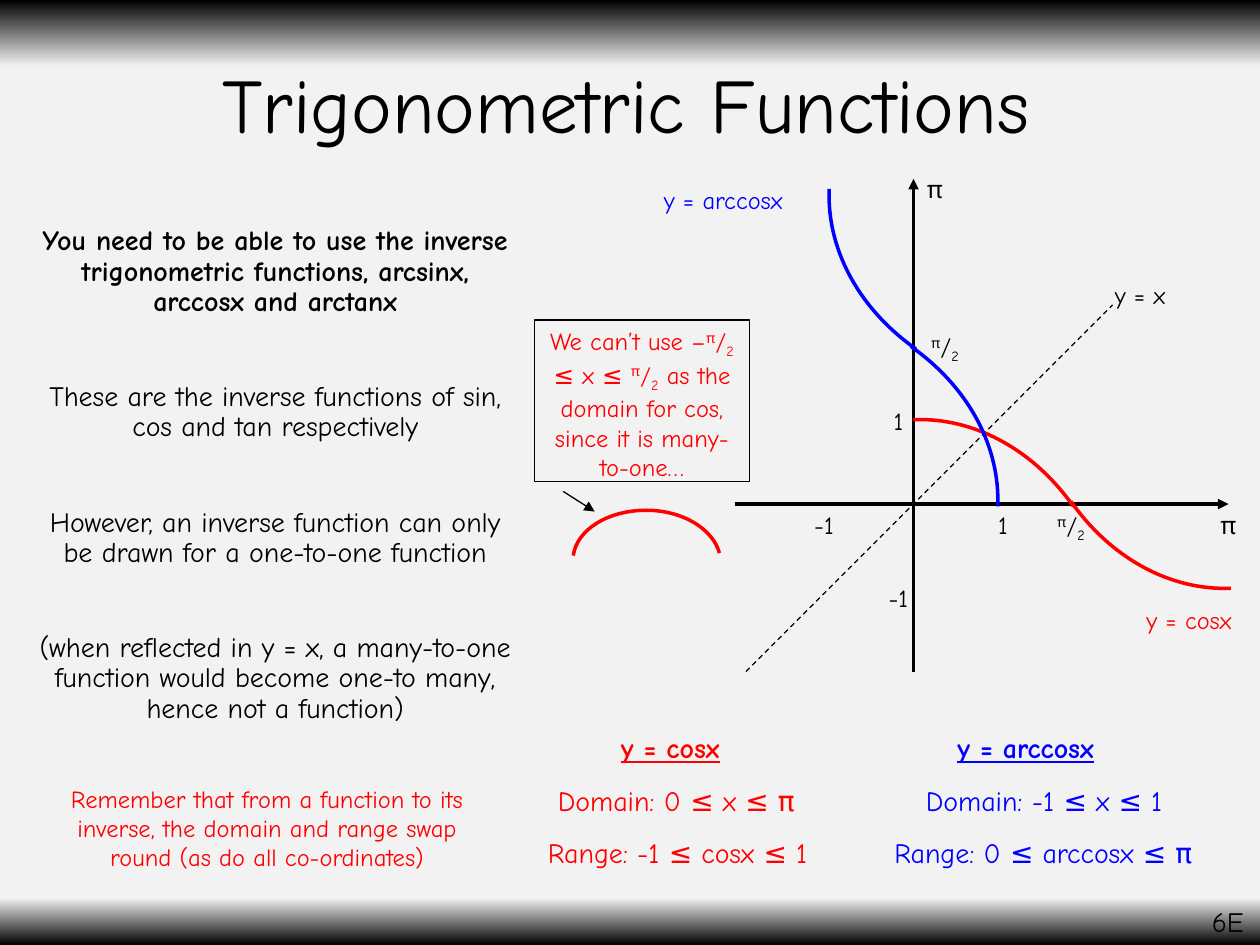
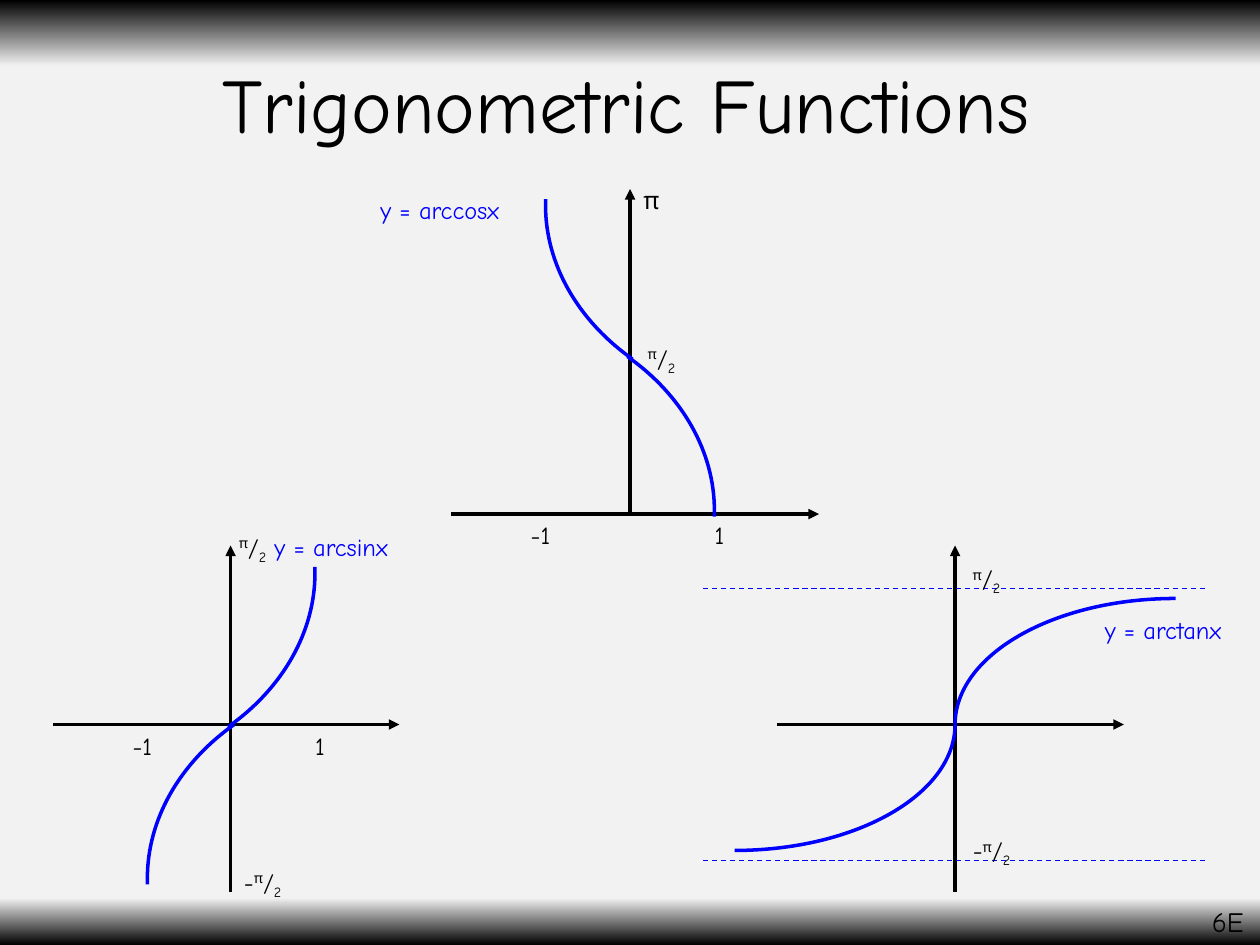
"""Two slides on the inverse trigonometric functions and their graphs."""
from lxml import etree
from pptx import Presentation
from pptx.dml.color import RGBColor
from pptx.enum import dml, shapes, text
from pptx.oxml.ns import qn
from pptx.util import Inches, Pt

FONT = "Comic Neue"
BLACK, RED, BLUE, GREY = "000000", "FF0000", "0000FF", "F2F2F2"
STOPS = [(0, BLACK), (7, GREY), (95, GREY), (100, BLACK)]
TITLE, CODE = "Trigonometric Functions", "6E"
HALF = "½"
PARTS = [("π", 30), ("/", 0), ("2", -25)]

WAVE = [(0, 0), (.02, 0), (.03, 0), (.05, 0), (.51, 0), (.96, .25), (1.27, .69),
        (.05, 2.17)]
BEND = [(0, 0), (.97, 0), (1.75, .45), (1.75, 1), (0, 1)]
DOME = [(0, 0), (.03, -.21), (.28, -.36), (.58, -.36),
        (.87, -.36), (1.11, -.21), (1.16, -.02), (.58, .04)]

NOTES = [
    "You need to be able to use the inverse trigonometric functions, "
    "arcsinx, arccosx and arctanx",
    "These are the inverse functions of sin, cos and tan respectively",
    "However, an inverse function can only be drawn for a one-to-one function",
    "(when reflected in y = x, a many-to-one function would become "
    "one-to many, hence not a function)",
]
SWAP = ("Remember that from a function to its inverse, the domain and range "
        "swap round (as do all co-ordinates)")
WARN = ("We can’t use –½ ≤ x ≤ ½ as the domain for cos, "
        "since it is many-to-one…")
FACTS = [
    (RED, [("y = cosx", 4.83, 1.33), ("Domain: 0 ≤ x ≤ π", 4.33, 2.5),
           ("Range: -1 ≤ cosx ≤ 1", 4.25, 2.42)]),
    (BLUE, [("y = arccosx", 7.5, 1.58), ("Domain: -1 ≤ x ≤ 1", 7.25, 2.08),
            ("Range: 0 ≤ arccosx ≤ π", 7, 2.67)]),
]
ROWS = [5.75, 6.17, 6.58]

PAIR = {
    "axes": [(7.25, 5.33, 7.25, 1.42), (5.83, 4, 9.75, 4)],
    "dashes": [(5.92, 5.33, 8.83, 2.42, BLACK)],
    "arcs": [(WAVE, 9.77, 4.67, -1, -1, False, RED),
             (WAVE, 7.25, 3.33, 1, 1, False, RED),
             (WAVE, 7.92, 4.02, -1, -1, True, BLUE),
             (WAVE, 6.58, 1.5, 1, 1, True, BLUE),
             (DOME, 4.55, 4.41, 1, 1, False, RED)],
    "ticks": [(HALF, 8.25, 4, .5), ("-1", 6.33, 4, .42), ("1", 6.92, 3.17, .42),
              ("π", 9.5, 4, .5), ("-1", 6.92, 4.58, .42), (HALF, 7.25, 2.58, .5),
              ("π", 7.17, 1.33, .5), ("1", 7.75, 4, .42)],
    "names": [("y = cosx", 9, 4.75, 1, RED), ("y = arccosx", 5.17, 1.42, 1.42, BLUE),
              ("y = x", 8.75, 2.17, .83, BLACK)],
}
TRIO = {
    "axes": [(1.83, 7.08, 1.83, 4.33), (.42, 5.75, 3.17, 5.75),
             (5, 4.08, 5, 1.5), (3.58, 4.08, 6.5, 4.08),
             (7.58, 7.08, 7.58, 4.33), (6.17, 5.75, 8.92, 5.75)],
    "dashes": [(5.58, 4.67, 9.58, 4.67, BLUE), (5.58, 6.83, 9.58, 6.83, BLUE)],
    "arcs": [(WAVE, 2.5, 4.5, -1, 1, True, BLUE),
             (WAVE, 1.17, 7.02, 1, -1, True, BLUE),
             (WAVE, 5.67, 4.1, -1, -1, True, BLUE),
             (WAVE, 4.33, 1.58, 1, 1, True, BLUE),
             (BEND, 9.33, 4.75, -1, 1, False, BLUE),
             (BEND, 5.83, 6.75, 1, -1, False, BLUE)],
    "ticks": [("1", 2.33, 5.75, .42), ("-" + HALF, 1.75, 6.83, .67),
              ("-1", .92, 5.75, .42), ("-1", 4.08, 4.08, .42),
              (HALF, 5, 2.67, .5), ("π", 4.92, 1.42, .5), ("1", 5.5, 4.08, .42),
              (HALF, 7.58, 4.42, .5), ("-" + HALF, 7.58, 6.58, .58),
              (HALF, 1.67, 4.17, .67)],
    "names": [("y = arcsinx", 2.08, 4.17, 1.42, BLUE),
              ("y = arccosx", 2.92, 1.5, 1.42, BLUE),
              ("y = arctanx", 8.67, 4.83, 1.33, BLUE)],
}


def tint(code):
    return RGBColor.from_string(code)


def split(words):
    runs = []
    for n, part in enumerate(words.split(HALF)):
        runs += PARTS if n else []
        runs += [(part, 0)] if part else []
    return runs


def fill(para, words, size, color, mid=False, bold=False, under=False):
    para.alignment = text.PP_ALIGN.CENTER if mid else text.PP_ALIGN.LEFT
    for part, base in split(words):
        run = para.add_run()
        run.text = part
        font = run.font
        font.name, font.size, font.bold = FONT, Pt(size), bold
        font.underline = under
        font.color.rgb = tint(color)
        if base:
            run._r.get_or_add_rPr().set("baseline", str(base * 1000))


def label(slide, words, x, y, w, h=.33, size=14, color=BLACK, **style):
    box = slide.shapes.add_textbox(Inches(x), Inches(y), Inches(w), Inches(h))
    box.text_frame.word_wrap = True
    fill(box.text_frame.paragraphs[0], words, size, color, **style)
    return box.text_frame


def line(slide, x1, y1, x2, y2, color=BLACK, width=2, arrow=False, dash=False):
    ends = [Inches(v) for v in (x1, y1, x2, y2)]
    link = slide.shapes.add_connector(shapes.MSO_CONNECTOR.STRAIGHT, *ends)
    link.line.color.rgb = tint(color)
    link.line.width = Pt(width)
    if dash:
        link.line.dash_style = dml.MSO_LINE.DASH
    props = link._element.spPr
    if arrow:
        tail = etree.SubElement(props.find(qn("a:ln")), qn("a:tailEnd"))
        tail.set("type", "triangle")
    etree.SubElement(props, qn("a:effectLst"))


def draw(route, kind, dots):
    step = etree.SubElement(route, qn("a:" + kind))
    for x, y in dots:
        etree.SubElement(step, qn("a:pt"), x=str(x), y=str(y))


def bend(curve, dots):
    """Replace the outline by an open arc and the lineless sector below it."""
    dots = [(x - curve.left, y - curve.top) for x, y in dots]
    routes = curve._element.find(".//" + qn("a:pathLst"))
    for old in list(routes):
        routes.remove(old)
    size = {"w": str(curve.width), "h": str(curve.height)}
    for extra in ({"fill": "none"}, {"stroke": "0"}):
        route = etree.SubElement(routes, qn("a:path"), **size, **extra)
        draw(route, "moveTo", dots[:1])
        for n in range(1, len(dots) - 1, 3):
            draw(route, "cubicBezTo", dots[n:n + 3])
        if "stroke" in extra:
            draw(route, "lnTo", dots[-1:])
            draw(route, "close", [])


def arc(slide, knots, x, y, sx, sy, turn, color):
    dots = [p[::-1] if turn else p for p in knots]
    dots = [(Inches(x + sx * a), Inches(y + sy * b)) for a, b in dots]
    pen = slide.shapes.build_freeform(*dots[0])
    pen.add_line_segments(dots[1:], close=False)
    curve = pen.convert_to_shape()
    bend(curve, dots)
    curve.shadow.inherit = False
    curve.fill.background()
    curve.line.color.rgb = tint(color)
    curve.line.width = Pt(2)


def paint(master):
    back = master.background.fill
    back.gradient()
    back.gradient_angle = 270
    stops = master._element.find(".//" + qn("a:gsLst"))
    for stop in list(stops):
        stops.remove(stop)
    for pos, code in STOPS:
        stop = etree.SubElement(stops, qn("a:gs"), pos=str(pos * 1000))
        etree.SubElement(stop, qn("a:srgbClr"), val=code)


def plot(deck, data):
    slide = deck.slides.add_slide(deck.slide_layouts[6])
    for ends in data["axes"]:
        line(slide, *ends, arrow=True)
    for ends in data["dashes"]:
        line(slide, *ends, width=.75, dash=True)
    for item in data["arcs"]:
        arc(slide, *item)
    for item in data["ticks"]:
        label(slide, *item, mid=True)
    for words, x, y, w, color in data["names"]:
        label(slide, words, x, y, w, color=color)
    head = label(slide, TITLE, .66, .14, 8.62, 1.45, 44, mid=True)
    head.vertical_anchor = text.MSO_ANCHOR.MIDDLE
    head.paragraphs[0].line_spacing = .9
    label(slide, CODE, 9.52, 7.13, .56, .37, 16)
    return slide


def explain(slide):
    frame = label(slide, NOTES[0], .17, 1.75, 4.03, 4.95, 16, mid=True, bold=True)
    for note in NOTES[1:]:
        para = frame.add_paragraph()
        fill(para, note, 16, BLACK, mid=True)
        para.space_before = Pt(37.2)
    for para in frame.paragraphs:
        para.line_spacing = .9
    label(slide, SWAP, .33, 6.17, 3.58, .8, color=RED, mid=True)
    for color, facts in FACTS:
        for n, ((words, x, w), y) in enumerate(zip(facts, ROWS)):
            label(slide, words, x, y, w, .37, 16, color, bold=n == 0, under=n == 0)
    box = slide.shapes.add_shape(shapes.MSO_SHAPE.RECTANGLE, Inches(4.24),
                                 Inches(2.54), Inches(1.71), Inches(1.28))
    box.shadow.inherit = False
    box.fill.background()
    box.line.color.rgb = tint(BLACK)
    box.line.width = Pt(.75)
    box.text_frame.word_wrap = True
    box.text_frame.vertical_anchor = text.MSO_ANCHOR.TOP
    fill(box.text_frame.paragraphs[0], WARN, 14, RED, mid=True)
    line(slide, 4.47, 3.9, 4.72, 4.06, width=.75, arrow=True)


def main():
    deck = Presentation()
    deck.slide_width, deck.slide_height = Inches(10), Inches(7.5)
    paint(deck.slide_master)
    explain(plot(deck, PAIR))
    plot(deck, TRIO)
    deck.save("out.pptx")


if __name__ == "__main__":
    main()
